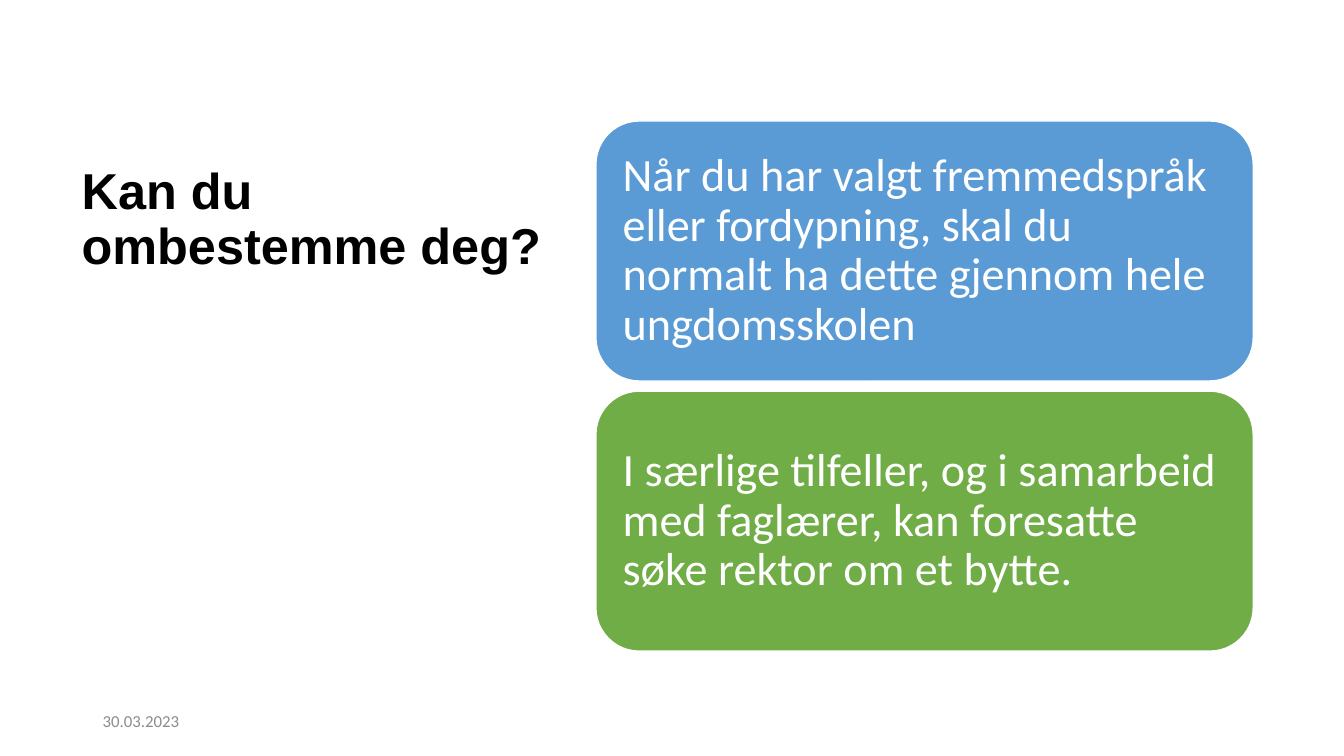
from dataclasses import dataclass

from pptx import Presentation
from pptx.dml.color import RGBColor as Rgb
from pptx.enum.shapes import MSO_SHAPE as Shape
from pptx.enum.text import MSO_ANCHOR as Anchor, MSO_AUTO_SIZE as Fit, PP_ALIGN as Align
from pptx.util import Inches, Pt


@dataclass(frozen=True)
class Theme:
    """Colours, fonts and type sizes of the slide."""
    black: str = "000000"
    white: str = "FFFFFF"
    grey: str = "8C8C8C"
    blue: str = "5B9BD5"
    green: str = "70AD47"
    head: str = "Arial"
    body: str = "Calibri"
    title: int = 36
    card: int = 33
    date: int = 12


THEME = Theme()
CARDS = [
    ("Når du har valgt fremmedspråk eller fordypning, skal du normalt ha dette "
     "gjennom hele ungdomsskolen", THEME.blue),
    ("I særlige tilfeller, og i samarbeid med faglærer, kan foresatte søke rektor "
     "om et bytte.", THEME.green),
]


def apply(item, values):
    """Set each named value on the item."""
    for name, value in values.items():
        setattr(item, name, value)


def write(shape, text, font, size, color, bold=False, anchor=Anchor.MIDDLE, space=0.9):
    """Put one left-aligned paragraph in the shape."""
    frame = shape.text_frame
    frame.text = text
    apply(frame, {"word_wrap": True, "auto_size": Fit.NONE, "vertical_anchor": anchor})
    line = frame.paragraphs[0]
    apply(line, {"alignment": Align.LEFT, "line_spacing": space})
    apply(line.font, {"name": font, "size": Pt(size), "bold": bold})
    line.font.color.rgb = Rgb.from_string(color)


def add_title(slide, text):
    """Place the heading in the title placeholder."""
    title = slide.shapes.title
    apply(title, {"left": Inches(0.71), "top": Inches(1.6),
                  "width": Inches(4.78), "height": Inches(1.87)})
    write(title, text, THEME.head, THEME.title, THEME.black, True, Anchor.TOP)


def add_card(slide, top, text, color):
    """Draw one rounded card with its text."""
    card = slide.shapes.add_shape(Shape.ROUNDED_RECTANGLE, Inches(5.91), Inches(top),
                                  Inches(6.52), Inches(2.58))
    card.shadow.inherit = False
    card.fill.solid()
    card.fill.fore_color.rgb = Rgb.from_string(color)
    card.line.color.rgb = Rgb.from_string(THEME.white)
    card.line.width = Pt(1)
    sides = ("left", "top", "right", "bottom")
    apply(card.text_frame, {f"margin_{side}": Inches(0.14) for side in sides})
    write(card, text, THEME.body, THEME.card, THEME.white)


def add_date(slide, text):
    """Place the date at the foot of the slide."""
    box = slide.shapes.add_textbox(Inches(0.92), Inches(6.95), Inches(3), Inches(0.4))
    write(box, text, THEME.body, THEME.date, THEME.grey, space=1.0)


def main():
    """Build and save the slide."""
    deck = Presentation()
    apply(deck, {"slide_width": Inches(13.33), "slide_height": Inches(7.5)})
    slide = deck.slides.add_slide(deck.slide_layouts[5])
    add_title(slide, "Kan du ombestemme deg?")
    for row, (text, color) in enumerate(CARDS):
        add_card(slide, 1.2 + row * 2.68, text, color)
    add_date(slide, "30.03.2023")
    deck.save("out.pptx")


if __name__ == "__main__":
    main()
